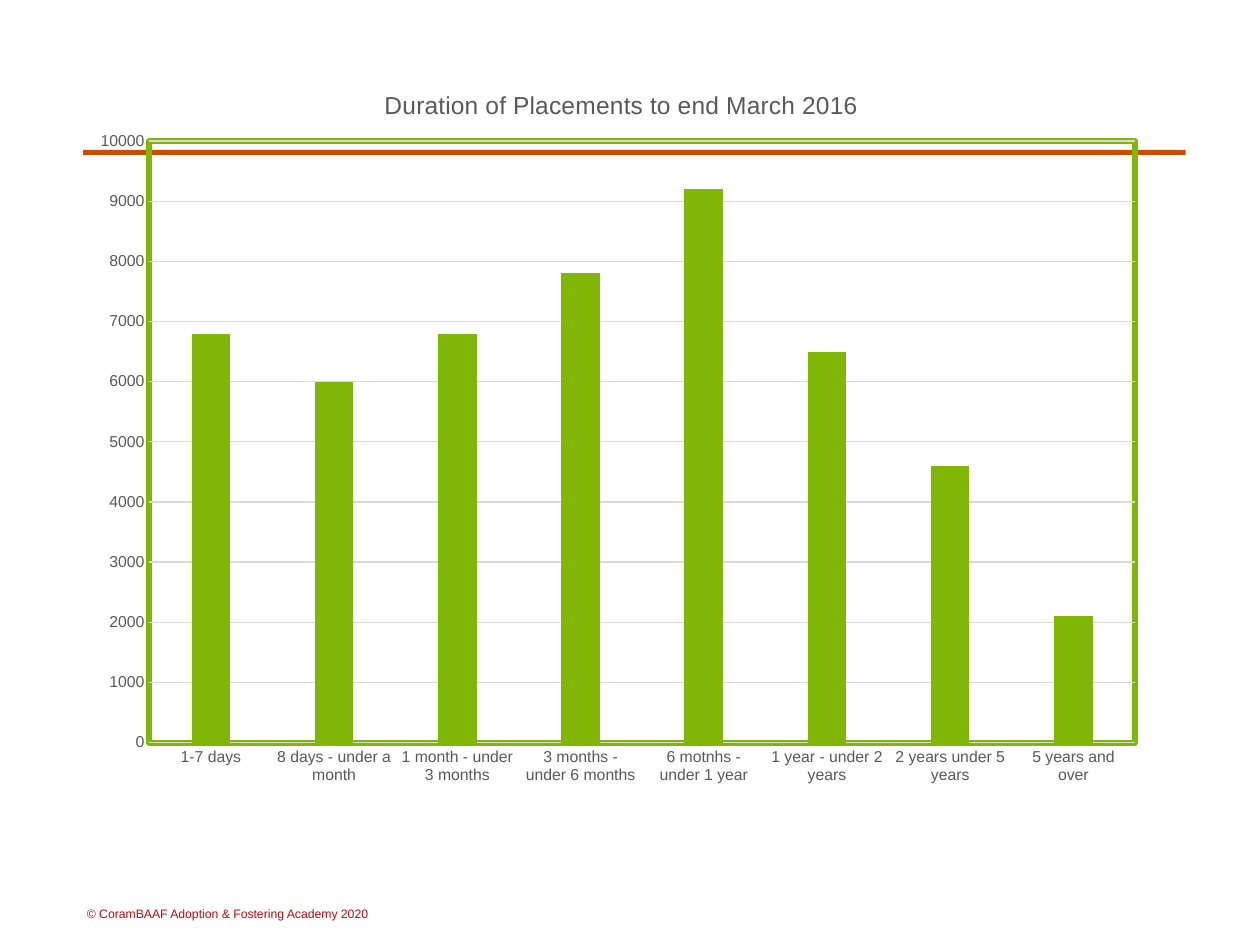
"""Build the slide on the duration of placements."""
from dataclasses import dataclass

from lxml import etree
from pptx import Presentation
from pptx.chart.data import CategoryChartData
from pptx.dml.color import RGBColor
from pptx.enum.chart import XL_CHART_TYPE, XL_TICK_MARK
from pptx.enum.shapes import MSO_SHAPE
from pptx.oxml import parse_xml
from pptx.oxml.ns import nsdecls, qn
from pptx.util import Inches, Pt

COLUMN = XL_CHART_TYPE.COLUMN_CLUSTERED
NO_TICK = XL_TICK_MARK.NONE
RECT = MSO_SHAPE.RECTANGLE


@dataclass(frozen=True)
class Theme:
    font: str = "Arial"
    rule: str = "CA4E00"
    bar: str = "80B606"
    text: str = "595959"
    grid: str = "D9D9D9"
    note: str = "B20E10"
    title: float = 14
    label: float = 9
    small: float = 7
    hair: float = 0.75
    frame: float = 3.5


@dataclass(frozen=True)
class Box:
    left: float
    top: float
    width: float
    height: float

    def place(self) -> tuple:
        return tuple(map(Inches, (self.left, self.top, self.width, self.height)))


@dataclass(frozen=True)
class Group:
    label: str
    count: int


THEME = Theme()
RULE = Box(0.66, 1.19, 8.75, 0.04)
NOTE = Box(0.69, 7.14, 3.37, 0.36)
CHART = Box(0.62, 0.44, 8.56, 5.91)
GROUPS = (
    Group("1-7 days", 6800),
    Group("8 days - under a month", 6000),
    Group("1 month - under 3 months", 6800),
    Group("3 months - under 6 months", 7800),
    Group("6 motnhs - under 1 year", 9200),
    Group("1 year - under 2 years", 6500),
    Group("2 years under 5 years", 4600),
    Group("5 years and over", 2100),
)


def style(target, values: dict) -> None:
    for name, value in values.items():
        setattr(target, name, value)


def set_font(font, size: float, color: str) -> None:
    style(font, {"name": THEME.font, "size": Pt(size), "bold": False})
    font.color.rgb = RGBColor.from_string(color)


def set_line(line, color: str) -> None:
    line.width = Pt(THEME.hair)
    line.color.rgb = RGBColor.from_string(color)


def set_layout(parent, index: int, values: dict) -> None:
    for old in parent.findall(qn("c:layout")):
        parent.remove(old)
    layout = etree.Element(qn("c:layout"))
    manual = etree.SubElement(layout, qn("c:manualLayout"))
    for name, value in values.items():
        etree.SubElement(manual, qn(f"c:{name}")).set("val", str(value))
    parent.insert(index, layout)


def add_rule(slide) -> None:
    rule = slide.shapes.add_shape(RECT, *RULE.place())
    rule.shadow.inherit = False
    rule.fill.solid()
    rule.fill.fore_color.rgb = RGBColor.from_string(THEME.rule)
    rule.line.fill.background()


def add_note(slide, text: str) -> None:
    frame = slide.shapes.add_textbox(*NOTE.place()).text_frame
    sides = ("left", "top", "right", "bottom")
    style(frame, {"word_wrap": True, **{f"margin_{side}": 0 for side in sides}})
    para = frame.paragraphs[0]
    para.line_spacing = Pt(12)
    run = para.add_run()
    run.text = text
    set_font(run.font, THEME.small, THEME.note)


def add_title(chart, text: str) -> None:
    title = chart.chart_title
    run = title.text_frame.paragraphs[0].add_run()
    run.text = text
    set_font(run.font, THEME.title, THEME.text)
    title.include_in_layout = False
    spot = {"xMode": "edge", "yMode": "edge", "x": 0.28, "y": 0.04}
    set_layout(chart.chart_title._element, 1, spot)


def frame_plot(chart) -> None:
    area = chart._chartSpace.chart.plotArea
    spot = {"layoutTarget": "inner", "xMode": "edge", "yMode": "edge",
            "x": 0.066, "y": 0.115, "w": 0.914, "h": 0.808}
    set_layout(area, 0, spot)
    area.append(parse_xml(
        f'<c:spPr {nsdecls("c", "a")}><a:noFill/>'
        f'<a:ln w="{Pt(THEME.frame)}"><a:solidFill><a:srgbClr val="{THEME.bar}"/>'
        '</a:solidFill><a:round/></a:ln></c:spPr>'))


def add_chart(slide) -> None:
    data = CategoryChartData()
    data.categories = [group.label for group in GROUPS]
    data.add_series("Series 1", [group.count for group in GROUPS])
    chart = slide.shapes.add_chart(COLUMN, *CHART.place(), data).chart
    set_font(chart.font, THEME.label, THEME.text)
    chart.has_legend = False
    add_title(chart, "Duration of Placements to end March 2016")
    plot = chart.plots[0]
    style(plot, {"gap_width": 219, "overlap": -27, "vary_by_categories": False})
    fill = plot.series[0].format.fill
    fill.solid()
    fill.fore_color.rgb = RGBColor.from_string(THEME.bar)
    for axis in (chart.category_axis, chart.value_axis):
        style(axis, {"major_tick_mark": NO_TICK, "minor_tick_mark": NO_TICK})
        set_font(axis.tick_labels.font, THEME.label, THEME.text)
    set_line(chart.category_axis.format.line, THEME.grid)
    scale = chart.value_axis
    style(scale, {"minimum_scale": 0, "maximum_scale": 10000, "major_unit": 1000})
    scale.format.line.fill.background()
    set_line(scale.major_gridlines.format.line, THEME.grid)
    frame_plot(chart)


def main() -> None:
    deck = Presentation()
    style(deck, {"slide_width": Inches(10), "slide_height": Inches(7.5)})
    slide = deck.slides.add_slide(deck.slide_layouts[6])
    add_rule(slide)
    add_note(slide, "© CoramBAAF Adoption & Fostering Academy 2020")
    add_chart(slide)
    deck.save("out.pptx")


if __name__ == "__main__":
    main()
